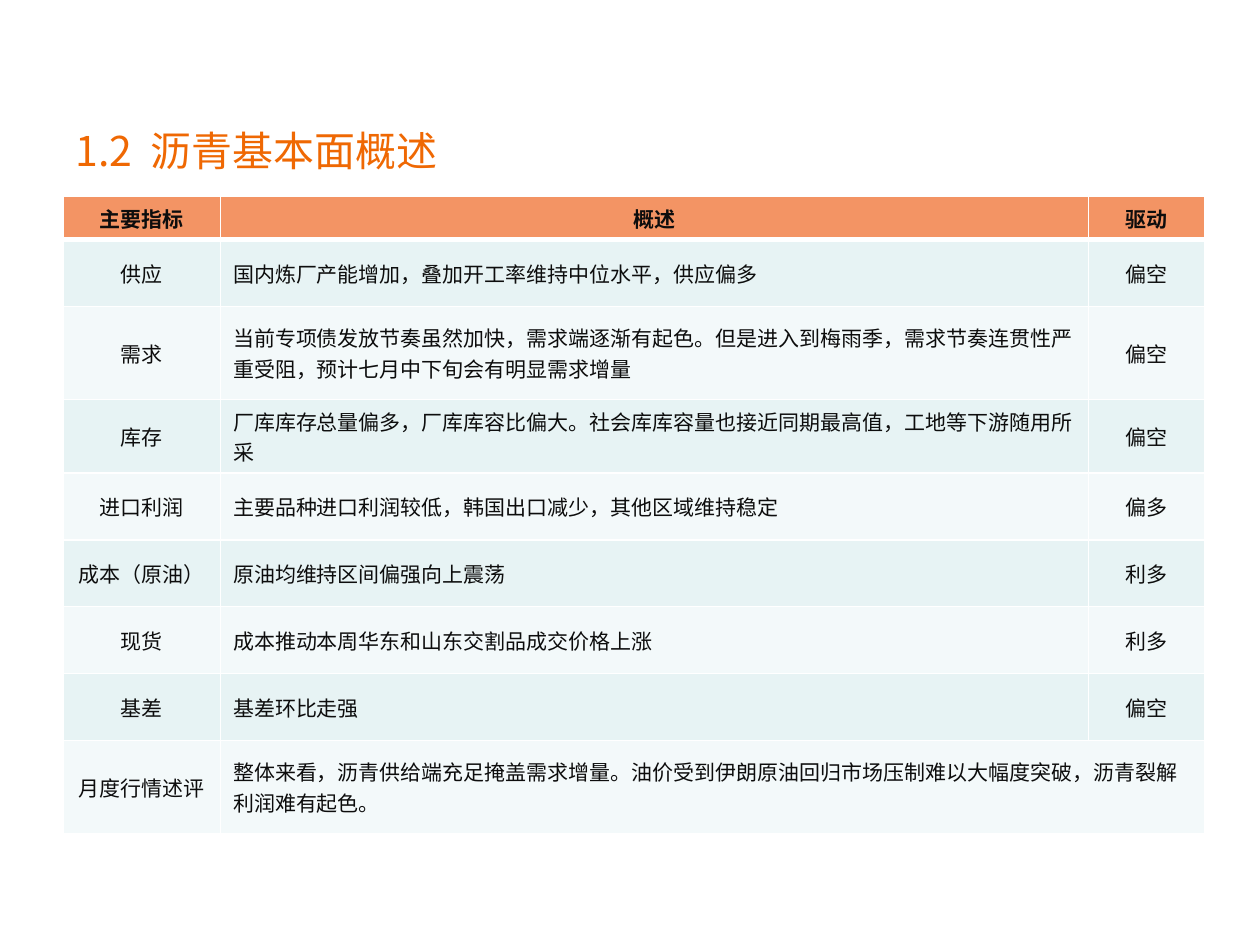
"""Build the asphalt fundamentals overview slide."""
from lxml.etree import SubElement
from pptx import Presentation
from pptx.dml.color import RGBColor
from pptx.enum.text import MSO_ANCHOR, PP_ALIGN
from pptx.oxml.ns import qn
from pptx.util import Inches, Pt

COLORS = {"title": "EF6803", "header": "F39464", "text": "0D0D0D",
          "odd": "E7F3F4", "even": "F3F9FA", "border": "FFFFFF"}
FONT = "Noto Sans CJK SC"
COLUMN_WIDTHS = [1.25, 6.89, 0.92]
ROW_HEIGHTS = [0.32, 0.53, 0.74, 0.53, 0.53, 0.53, 0.53, 0.53, 0.74]
INDICATORS = [
    ("主要指标", "概述", "驱动"),
    ("供应", "国内炼厂产能增加，叠加开工率维持中位水平，供应偏多", "偏空"),
    ("需求", "当前专项债发放节奏虽然加快，需求端逐渐有起色。但是进入到梅雨季，"
     "需求节奏连贯性严重受阻，预计七月中下旬会有明显需求增量", "偏空"),
    ("库存", "厂库库存总量偏多，厂库库容比偏大。社会库库容量也接近同期最高值，"
     "工地等下游随用所采", "偏空"),
    ("进口利润", "主要品种进口利润较低，韩国出口减少，其他区域维持稳定", "偏多"),
    ("成本（原油）", "原油均维持区间偏强向上震荡", "利多"),
    ("现货", "成本推动本周华东和山东交割品成交价格上涨", "利多"),
    ("基差", "基差环比走强", "偏空"),
    ("月度行情述评", "整体来看，沥青供给端充足掩盖需求增量。油价受到伊朗原油回归市场压制"
     "难以大幅度突破，沥青裂解利润难有起色。", ""),
]


def format_text(paragraph, size, color, bold=False):
    for run in paragraph.runs:
        run.font.size = Pt(size)
        run.font.bold = bold
        run.font.color.rgb = RGBColor.from_string(COLORS[color])
        run.font.name = FONT
        SubElement(run.font._element, qn("a:ea"), typeface=FONT)


def add_border(cell, side, width):
    line = SubElement(cell._tc.get_or_add_tcPr(), qn(f"a:ln{side}"), w=str(Pt(width)))
    fill = SubElement(line, qn("a:solidFill"))
    SubElement(fill, qn("a:srgbClr"), val=COLORS["border"])


presentation = Presentation()
presentation.slide_width = Inches(10)
presentation.slide_height = Inches(7.5)
slide = presentation.slides.add_slide(presentation.slide_layouts[6])

overview = slide.shapes.add_table(
    len(ROW_HEIGHTS), len(COLUMN_WIDTHS), Inches(0.5), Inches(1.56),
    Inches(sum(COLUMN_WIDTHS)), Inches(sum(ROW_HEIGHTS))).table
for column, width in zip(overview.columns, COLUMN_WIDTHS):
    column.width = Inches(width)
for row, height in zip(overview.rows, ROW_HEIGHTS):
    row.height = Inches(height)
overview.cell(8, 1).merge(overview.cell(8, 2))

for row_index, indicator in enumerate(INDICATORS):
    is_header = row_index == 0
    band = "header" if is_header else "odd" if row_index % 2 else "even"
    for column_index, wording in enumerate(indicator):
        cell = overview.cell(row_index, column_index)
        for side in "LRTB":
            under_header = (row_index, side) in [(0, "B"), (1, "T")]
            add_border(cell, side, 3 if under_header else 1)
        cell.fill.solid()
        cell.fill.fore_color.rgb = RGBColor.from_string(COLORS[band])
        if cell.is_spanned:
            continue
        cell.vertical_anchor = MSO_ANCHOR.MIDDLE
        cell.text_frame.text = wording
        paragraph = cell.text_frame.paragraphs[0]
        is_summary = column_index == 1 and not is_header
        paragraph.alignment = PP_ALIGN.LEFT if is_summary else PP_ALIGN.CENTER
        format_text(paragraph, 12, "text", is_header)

title = slide.shapes.add_textbox(Inches(0.5), Inches(0.95), Inches(9), Inches(0.48))
title.text_frame.word_wrap = True
title.text_frame.vertical_anchor = MSO_ANCHOR.MIDDLE
title.text_frame.text = "1.2  沥青基本面概述"
format_text(title.text_frame.paragraphs[0], 23.4, "title")

presentation.save("out.pptx")
